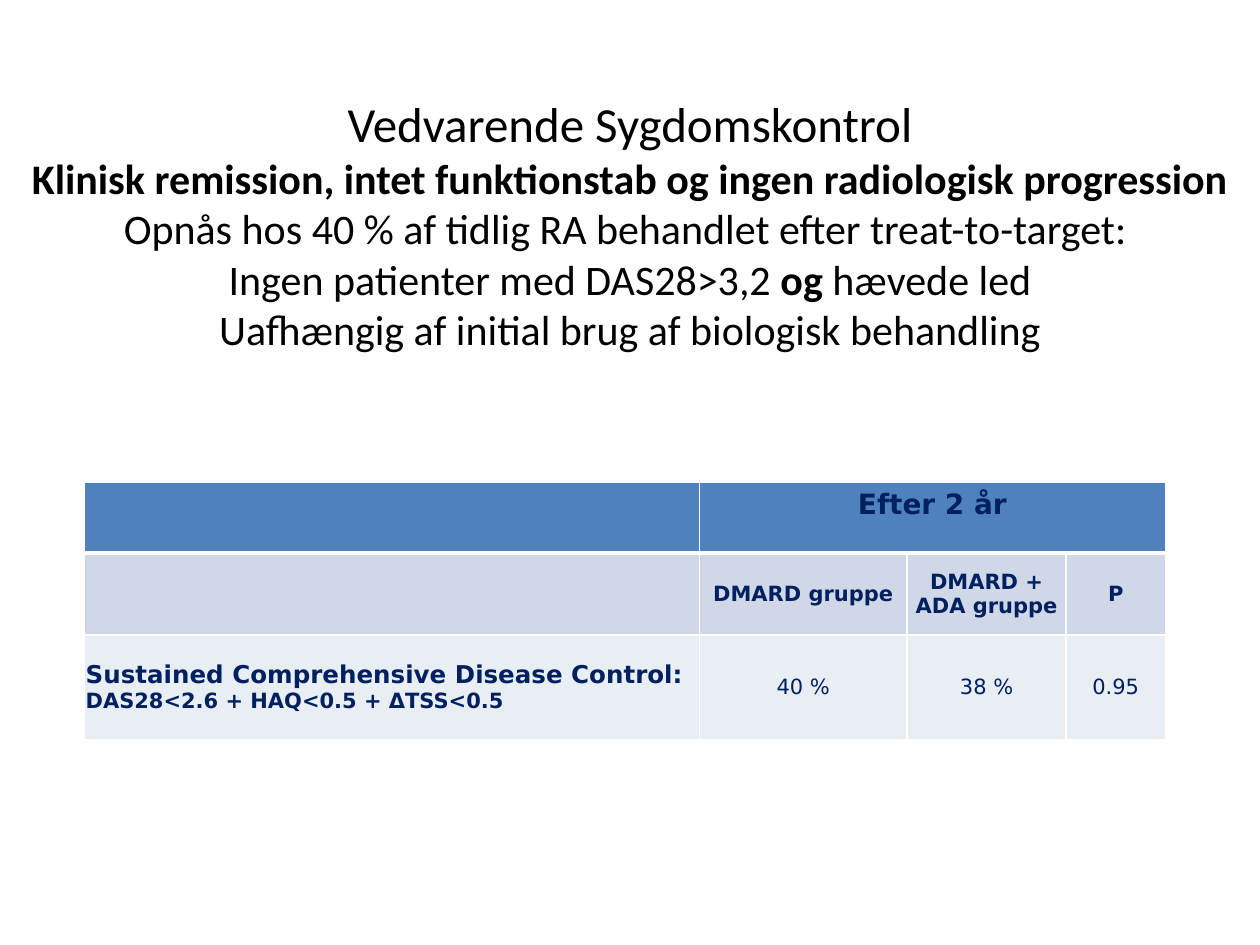
"""Build a slide on sustained disease control with a two-year result table."""
from lxml import etree
from pptx import Presentation, util as u
from pptx.dml.color import RGBColor
from pptx.enum import text as t
from pptx.oxml.ns import qn

BLACK = RGBColor(0, 0, 0)
NAVY = RGBColor(0x00, 0x20, 0x60)
WHITE = RGBColor(0xFF, 0xFF, 0xFF)
FILLS = [RGBColor(0x4F, 0x81, 0xBD), RGBColor(0xD0, 0xD8, 0xE8), RGBColor(0xE9, 0xED, 0xF4)]

TITLE = [
    [("Vedvarende Sygdomskontrol", 28, False)],
    [("Klinisk remission, intet funktionstab og ingen radiologisk progression", 24, True)],
    [("Opnås hos 40 % af tidlig RA behandlet efter treat-to-target: ", 24, False)],
    [("Ingen patienter med DAS28>3,2 ", 24, False), ("og ", 24, True), ("hævede led", 24, False)],
    [("Uafhængig af initial brug af biologisk behandling", 24, False)],
]
ROWS = [
    [[], [("Efter 2 år", 16, True)], [], []],
    [[], [("DMARD gruppe", 12, True)], [("DMARD + ADA gruppe", 12, True)], [("P", 12, True)]],
    [[("Sustained Comprehensive Disease Control: ", 14, True),
      ("DAS28<2.6 + HAQ<0.5 + ΔTSS<0.5", 12, True)],
     [("40 %", 12, False)], [("38 %", 12, False)], [("0.95", 12, False)]],
]
WIDTHS = [4.88, 1.65, 1.26, 0.79]
HEIGHTS = [0.56, 0.65, 0.83]


def write(frame, lines, font="Calibri", color=BLACK, align=t.PP_ALIGN.CENTER):
    par = frame.paragraphs[0]
    par.alignment = align
    for num, line in enumerate(lines):
        if num:
            par.add_line_break()
        for words, size, bold in line:
            run = par.add_run()
            run.text = words
            run.font.name, run.font.size, run.font.bold = font, u.Pt(size), bold
            run.font.color.rgb = color


def edge(cell, base):
    props = cell._tc.get_or_add_tcPr()
    for pos, side in enumerate("LRTB"):
        width = base if side == "B" else 1
        line = etree.Element(qn(f"a:ln{side}"), w=str(u.Pt(width)))
        fill = etree.SubElement(line, qn("a:solidFill"))
        etree.SubElement(fill, qn("a:srgbClr"), val=str(WHITE))
        props.insert(pos, line)


def grid(slide):
    table = slide.shapes.add_table(
        len(ROWS), len(WIDTHS), u.Inches(0.67), u.Inches(3.83),
        u.Inches(sum(WIDTHS)), u.Inches(sum(HEIGHTS))).table
    for col, width in zip(table.columns, WIDTHS):
        col.width = u.Inches(width)
    for r, row in enumerate(ROWS):
        table.rows[r].height = u.Inches(HEIGHTS[r])
        for c, runs in enumerate(row):
            cell = table.cell(r, c)
            cell.fill.solid()
            cell.fill.fore_color.rgb = FILLS[r]
            edge(cell, 1 if r else 3)
            if r and runs:
                cell.vertical_anchor = t.MSO_ANCHOR.MIDDLE
                cell.margin_left = cell.margin_right = u.Inches(0.01)
                cell.margin_top = cell.margin_bottom = u.Inches(0.01)
            write(cell.text_frame, [runs], font="DejaVu Sans", color=NAVY,
                  align=t.PP_ALIGN.CENTER if c else t.PP_ALIGN.LEFT)
    table.cell(0, 1).merge(table.cell(0, 3))


def main():
    deck = Presentation()
    deck.slide_width, deck.slide_height = u.Inches(10), u.Inches(7.5)
    slide = deck.slides.add_slide(deck.slide_layouts[6])
    grid(slide)
    box = slide.shapes.add_textbox(u.Inches(0.12), u.Inches(1.15), u.Inches(9.76), u.Inches(1.25))
    box.text_frame.word_wrap = True
    box.text_frame.vertical_anchor = t.MSO_ANCHOR.MIDDLE
    write(box.text_frame, TITLE)
    deck.save("out.pptx")


if __name__ == "__main__":
    main()
